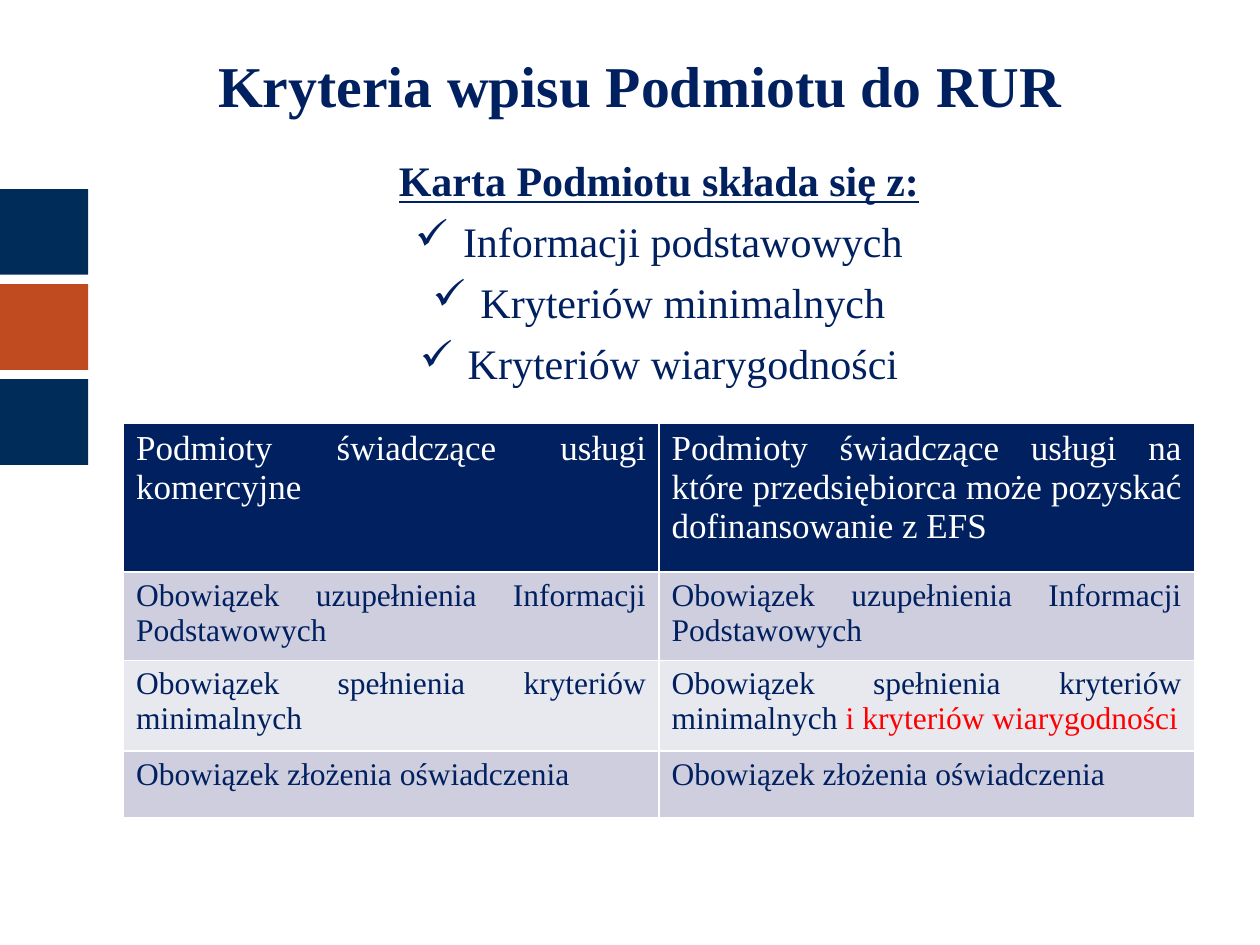
from lxml.etree import SubElement
from pptx import Presentation
from pptx.dml.color import RGBColor
from pptx.enum.shapes import MSO_SHAPE
from pptx.enum.text import MSO_ANCHOR, PP_ALIGN
from pptx.oxml.ns import qn
from pptx.util import Inches, Pt

FONT = "Times New Roman"
NAVY = RGBColor(0x00, 0x20, 0x60)
BAR_BLUE = RGBColor(0x00, 0x2C, 0x5A)
BAR_ORANGE = RGBColor(0xC1, 0x4B, 0x20)
BAND_DARK = RGBColor(0xCE, 0xCE, 0xDE)
BAND_LIGHT = RGBColor(0xE8, 0xE8, 0xEF)
WHITE = RGBColor(0xFF, 0xFF, 0xFF)
RED = RGBColor(0xFF, 0x00, 0x00)

TITLE = "Kryteria wpisu Podmiotu do RUR"
CARD_HEADING = "Karta Podmiotu składa się z:"
CARD_PARTS = ["Informacji podstawowych", "Kryteriów minimalnych", "Kryteriów wiarygodności"]

BASIC_INFO = "Obowiązek uzupełnienia Informacji Podstawowych"
MINIMUM = "Obowiązek spełnienia kryteriów minimalnych"
STATEMENT = "Obowiązek złożenia oświadczenia"
# Each row: height, fill, text size, text colour, cells as lists of (text, own colour)
ROWS = [
    (1.18, NAVY, 20, WHITE, [
        [("Podmioty świadczące usługi komercyjne", None)],
        [("Podmioty świadczące usługi na które przedsiębiorca może pozyskać "
          "dofinansowanie z EFS", None)]]),
    (0.65, BAND_DARK, 18, NAVY, [[(BASIC_INFO, None)]] * 2),
    (0.72, BAND_LIGHT, 18, NAVY, [
        [(MINIMUM, None)],
        [(MINIMUM + " ", None), ("i kryteriów wiarygodności", RED)]]),
    (0.53, BAND_DARK, 18, NAVY, [[(STATEMENT, None)]] * 2),
]


def style_font(font, size, color, bold=False, underline=False):
    font.name = FONT
    font.size = Pt(size)
    font.color.rgb = color
    font.bold = bold
    font.underline = underline


def add_text_box(page, left, top, width, height):
    box = page.shapes.add_textbox(Inches(left), Inches(top), Inches(width), Inches(height))
    frame = box.text_frame
    frame.word_wrap = True
    frame.margin_top = 0
    return frame


def add_side_bars(page, left, top, width, height, step):
    for index, color in enumerate([BAR_BLUE, BAR_ORANGE, BAR_BLUE]):
        bar = page.shapes.add_shape(MSO_SHAPE.RECTANGLE, Inches(left),
                                    Inches(top + index * step), Inches(width), Inches(height))
        bar.shadow.inherit = False
        bar.fill.solid()
        bar.fill.fore_color.rgb = color
        bar.line.fill.background()


def add_title(page, left, top, width, height):
    frame = add_text_box(page, left, top, width, height)
    frame.vertical_anchor = MSO_ANCHOR.MIDDLE
    frame.text = TITLE
    para = frame.paragraphs[0]
    para.alignment = PP_ALIGN.CENTER
    style_font(para.runs[0].font, 33, NAVY, bold=True)


def add_card_list(page, left, top, width, height):
    frame = add_text_box(page, left, top, width, height)
    frame.text = "\n".join([CARD_HEADING] + CARD_PARTS)
    for index, para in enumerate(frame.paragraphs):
        heading = index == 0
        para.alignment = PP_ALIGN.CENTER
        properties = para._p.get_or_add_pPr()
        properties.set("marL", str(Inches(0.38)))
        properties.set("indent", str(Inches(-0.38)))
        if not heading:
            para.space_before = Pt(6)
            SubElement(properties, qn("a:buChar")).set("char", "✓")
        style_font(para.runs[0].font, 24, NAVY, bold=heading, underline=heading)


def add_cell_borders(cell):
    properties = cell._tc.get_or_add_tcPr()
    for index, side in enumerate(["lnL", "lnR", "lnT", "lnB"]):
        line = properties.makeelement(qn("a:" + side), {"w": str(Pt(1))})
        fill = SubElement(line, qn("a:solidFill"))
        SubElement(fill, qn("a:srgbClr")).set("val", str(WHITE))
        properties.insert(index, line)


def add_duties_table(page, left, top, width):
    height = sum(row[0] for row in ROWS)
    table = page.shapes.add_table(len(ROWS), 2, Inches(left), Inches(top),
                                  Inches(width), Inches(height)).table
    for row_index, (row_height, fill, size, color, cells) in enumerate(ROWS):
        table.rows[row_index].height = Inches(row_height)
        for column_index, spans in enumerate(cells):
            cell = table.cell(row_index, column_index)
            cell.fill.solid()
            cell.fill.fore_color.rgb = fill
            add_cell_borders(cell)
            para = cell.text_frame.paragraphs[0]
            para.alignment = PP_ALIGN.JUSTIFY
            for text, own_color in spans:
                span = para.add_run()
                span.text = text
                style_font(span.font, size, own_color or color)


def main():
    deck = Presentation()
    deck.slide_width, deck.slide_height = Inches(10), Inches(7.5)
    page = deck.slides.add_slide(deck.slide_layouts[6])
    # Coloured bars on the left edge
    add_side_bars(page, 0, 1.5, 0.7, 0.68, 0.755)
    # Contents of the card
    add_card_list(page, 0.98, 1.23, 8.5, 5.28)
    add_title(page, 0.83, 0.36, 8.5, 0.67)
    # Duties of the two kinds of entity
    add_duties_table(page, 0.98, 3.36, 8.5)
    deck.save("out.pptx")


if __name__ == "__main__":
    main()
